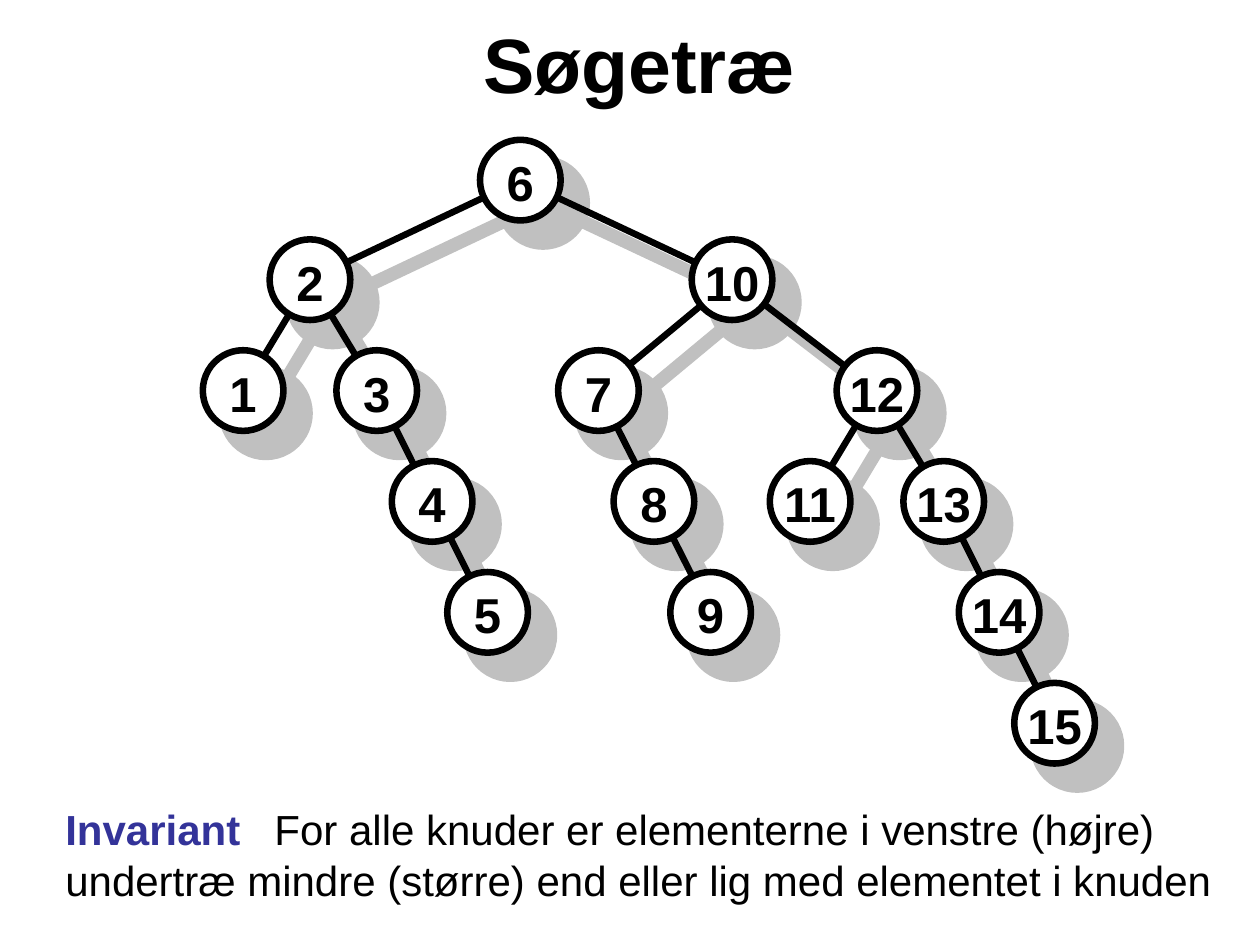
from lxml import etree
from pptx import Presentation
from pptx.dml.color import RGBColor
from pptx.enum.shapes import MSO_CONNECTOR, MSO_SHAPE
from pptx.enum.text import MSO_ANCHOR, PP_ALIGN
from pptx.oxml.ns import qn
from pptx.util import Inches, Pt

STRAIGHT = MSO_CONNECTOR.STRAIGHT
ELLIPSE = MSO_SHAPE.OVAL
CENTER, LEFT = PP_ALIGN.CENTER, PP_ALIGN.LEFT
MIDDLE, TOP = MSO_ANCHOR.MIDDLE, MSO_ANCHOR.TOP

BLACK = RGBColor(0x00, 0x00, 0x00)
WHITE = RGBColor(0xFF, 0xFF, 0xFF)
GRAY = RGBColor(0xC0, 0xC0, 0xC0)
INDIGO = RGBColor(0x33, 0x33, 0x99)
FONT = "Arial"

# Content
TITLE = "Søgetræ"
INVARIANT_TERM = "Invariant"
INVARIANT_RULE = ("For alle knuder er elementerne i venstre (højre) undertræ "
                  "mindre (større) end eller lig med elementet i knuden")
# Key: (centre x in inches, depth in the tree)
NODES = {
    6: (4.13, 0),
    2: (2.46, 1), 10: (5.81, 1),
    1: (1.93, 2), 3: (2.99, 2), 7: (4.75, 2), 12: (6.96, 2),
    4: (3.43, 3), 8: (5.19, 3), 11: (6.43, 3), 13: (7.49, 3),
    5: (3.87, 4), 9: (5.64, 4), 14: (7.93, 4),
    15: (8.37, 5),
}
# A straight chain of right children is one line, passing behind the middle node
EDGES = [(6, 2), (6, 10), (2, 1), (2, 3), (3, 5), (10, 7), (10, 12),
         (7, 9), (12, 11), (12, 13), (13, 15)]

# Layout
ROOT_Y = 1.43
FIRST_STEP = 0.79
LEVEL_STEP = 0.88
DIAMETER = 0.64
SHADOW_OFFSET = 0.18
SHADOW_WIDTH = 7.63
LINE_WIDTH = 3.75
RULE_TAB = 1.66


def center(key, offset):
    x, depth = NODES[key]
    drop = FIRST_STEP + (depth - 1) * LEVEL_STEP if depth else 0
    return x + offset, ROOT_Y + drop + offset


def add_run(paragraph, text, size, color, bold):
    run = paragraph.add_run()
    run.text = text
    run.font.name = FONT
    run.font.size = Pt(size)
    run.font.bold = bold
    run.font.color.rgb = color


def add_edge(group, parent, child, offset, color, width):
    ends = center(parent, offset) + center(child, offset)
    edge = group.shapes.add_connector(STRAIGHT, *map(Inches, ends))
    edge.line.color.rgb = color
    edge.line.width = Pt(width)
    etree.SubElement(edge._element.spPr, qn("a:effectLst"))


def add_node(group, key, offset, fill, color, width):
    x, y = center(key, offset)
    node = group.shapes.add_shape(
        ELLIPSE, Inches(x - DIAMETER / 2), Inches(y - DIAMETER / 2),
        Inches(DIAMETER), Inches(DIAMETER))
    node.shadow.inherit = False
    node.fill.solid()
    node.fill.fore_color.rgb = fill
    node.line.color.rgb = color
    node.line.width = Pt(width)
    return node


def label_node(node, key):
    frame = node.text_frame
    frame.word_wrap = False
    frame.vertical_anchor = MIDDLE
    frame.margin_left = frame.margin_right = frame.margin_bottom = 0
    frame.margin_top = Inches(0.03)
    frame.paragraphs[0].alignment = CENTER
    add_run(frame.paragraphs[0], str(key), 28, BLACK, True)


def add_title(slide):
    title = slide.shapes.title
    title.left, title.top = Inches(0.5), Inches(0)
    title.width, title.height = Inches(9), Inches(1)
    frame = title.text_frame
    frame.vertical_anchor = MIDDLE
    frame.margin_left = Inches(0.25)
    frame.paragraphs[0].alignment = CENTER
    add_run(frame.paragraphs[0], TITLE, 44, BLACK, True)


def add_tree(slide):
    group = slide.shapes.add_group_shape()
    # Shadow of the whole tree
    for key in NODES:
        add_node(group, key, SHADOW_OFFSET, GRAY, GRAY, SHADOW_WIDTH)
    for parent, child in EDGES:
        add_edge(group, parent, child, SHADOW_OFFSET, GRAY, SHADOW_WIDTH)
    # The tree itself
    for parent, child in EDGES:
        add_edge(group, parent, child, 0, BLACK, LINE_WIDTH)
    for key in NODES:
        label_node(add_node(group, key, 0, WHITE, BLACK, LINE_WIDTH), key)


def add_invariant(slide):
    box = slide.shapes.add_textbox(
        Inches(0.42), Inches(6.33), Inches(9.42), Inches(0.9))
    frame = box.text_frame
    frame.word_wrap = True
    frame.vertical_anchor = TOP
    paragraph = frame.paragraphs[0]
    paragraph.alignment = LEFT
    add_run(paragraph, INVARIANT_TERM + "\t", 24, INDIGO, True)
    add_run(paragraph, INVARIANT_RULE, 24, BLACK, False)
    # Tab stop between the term and its rule
    tabs = etree.SubElement(paragraph._p.get_or_add_pPr(), qn("a:tabLst"))
    etree.SubElement(tabs, qn("a:tab"), pos=str(Inches(RULE_TAB)), algn="l")


def main():
    deck = Presentation()
    deck.slide_width, deck.slide_height = Inches(10), Inches(7.5)
    slide = deck.slides.add_slide(deck.slide_layouts[5])
    add_title(slide)
    add_invariant(slide)
    add_tree(slide)
    deck.save("out.pptx")


if __name__ == "__main__":
    main()
